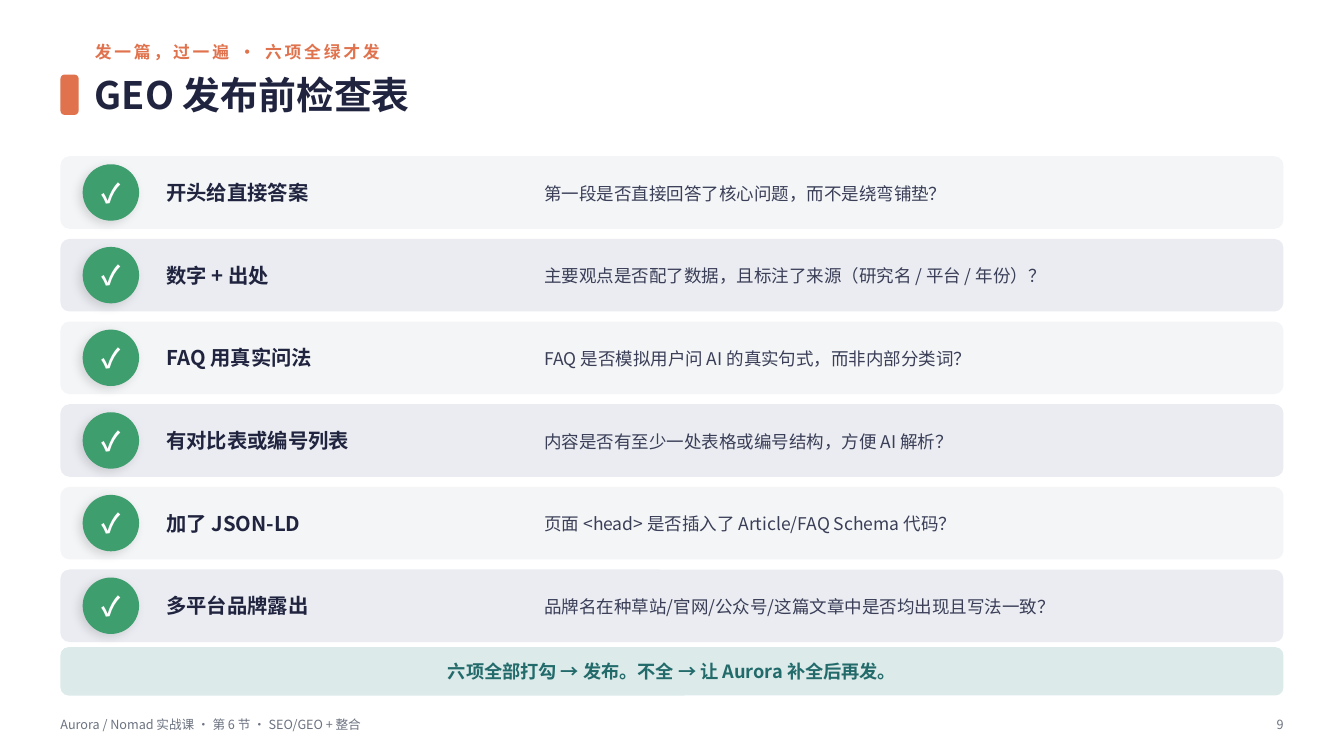
from lxml.etree import SubElement
from pptx import Presentation
from pptx.dml.color import RGBColor
from pptx.enum.shapes import MSO_SHAPE
from pptx.enum.text import MSO_ANCHOR, PP_ALIGN
from pptx.oxml.ns import qn
from pptx.util import Inches, Pt

FONT = "Noto Sans CJK SC"
COLORS = {
    "accent": "E0734D", "ink": "20243F", "body": "3A3E57", "muted": "6B7280",
    "odd_row": "F4F5F7", "even_row": "EAECF1", "check": "3E9E6E",
    "white": "FFFFFF", "summary": "DCEAEA", "teal": "236B6B",
}
CHECKS = [
    ("开头给直接答案", "第一段是否直接回答了核心问题，而不是绕弯铺垫？"),
    ("数字 + 出处", "主要观点是否配了数据，且标注了来源（研究名 / 平台 / 年份）？"),
    ("FAQ 用真实问法", "FAQ 是否模拟用户问 AI 的真实句式，而非内部分类词？"),
    ("有对比表或编号列表", "内容是否有至少一处表格或编号结构，方便 AI 解析？"),
    ("加了 JSON-LD", "页面 <head> 是否插入了 Article/FAQ Schema 代码？"),
    ("多平台品牌露出", "品牌名在种草站/官网/公众号/这篇文章中是否均出现且写法一致？"),
]

SLIDE_W, SLIDE_H = 13.33, 7.5
MARGIN = 0.6
CONTENT_W = SLIDE_W - 2 * MARGIN
RIGHT = SLIDE_W - MARGIN
HEADING_X = 0.94
HEADING_W = RIGHT - HEADING_X
ROWS_TOP, ROW_H, ROW_GAP = 1.55, 0.72, 0.1
CHECK_X, CHECK_SIZE = 0.82, 0.56
NAME_X, NAME_W = 1.65, 3.6
QUESTION_X, QUESTION_W = 5.4, 7.08
LABEL_H = 0.6
FOOTER_Y, FOOTER_H = 7.04, 0.3

prs = Presentation()
prs.slide_width, prs.slide_height = Inches(SLIDE_W), Inches(SLIDE_H)
slide = prs.slides.add_slide(prs.slide_layouts[6])


def add_block(kind, x, y, w, h, color, radius=None):
    block = slide.shapes.add_shape(kind, Inches(x), Inches(y), Inches(w), Inches(h))
    block.shadow.inherit = False
    block.fill.solid()
    block.fill.fore_color.rgb = RGBColor.from_string(COLORS[color])
    block.line.fill.background()
    if radius is not None:
        block.adjustments[0] = radius / min(w, h)
    return block


def write(box, text, size, color, bold=False, align=PP_ALIGN.LEFT):
    """Fill a shape, or a new text box at (x, y, w, h), with one paragraph."""
    if isinstance(box, tuple):
        box = slide.shapes.add_textbox(*map(Inches, box))
    frame = box.text_frame
    frame.word_wrap = True
    frame.vertical_anchor = MSO_ANCHOR.MIDDLE
    frame.margin_left = frame.margin_right = frame.margin_top = frame.margin_bottom = 0
    paragraph = frame.paragraphs[0]
    paragraph.text = text
    paragraph.alignment = align
    font = paragraph.font
    font.name, font.size, font.bold = FONT, Pt(size), bold
    font.color.rgb = RGBColor.from_string(COLORS[color])
    SubElement(paragraph._p.pPr.find(qn("a:defRPr")), qn("a:ea"), typeface=FONT)
    return paragraph


# Heading
kicker = write((HEADING_X, 0.36, HEADING_W, 0.3), "发一篇，过一遍 · 六项全绿才发", 12, "accent", bold=True)
kicker._p.pPr.find(qn("a:defRPr")).set("spc", "200")
add_block(MSO_SHAPE.ROUNDED_RECTANGLE, MARGIN, 0.74, 0.18, 0.4, "accent", radius=0.04)
write((HEADING_X, 0.64, HEADING_W, 0.6), "GEO 发布前检查表", 27, "ink", bold=True)

# Checklist
for i, (name, question) in enumerate(CHECKS):
    top = ROWS_TOP + i * (ROW_H + ROW_GAP)
    add_block(MSO_SHAPE.ROUNDED_RECTANGLE, MARGIN, top, CONTENT_W, ROW_H,
              "even_row" if i % 2 else "odd_row", radius=0.09)

    check = add_block(MSO_SHAPE.OVAL, CHECK_X, top + (ROW_H - CHECK_SIZE) / 2,
                      CHECK_SIZE, CHECK_SIZE, "check")
    effects = check._element.spPr.find(qn("a:effectLst"))
    shadow = SubElement(effects, qn("a:outerShdw"), blurRad=str(Pt(7)), dist=str(Pt(3)),
                        dir=str(135 * 60000), algn="bl", rotWithShape="0")
    black = SubElement(shadow, qn("a:srgbClr"), val="000000")
    SubElement(black, qn("a:alpha"), val="12000")
    write(check, "✓", 19, "white", bold=True, align=PP_ALIGN.CENTER)

    label_top = top + (ROW_H - LABEL_H) / 2
    write((NAME_X, label_top, NAME_W, LABEL_H), name, 14.5, "ink", bold=True)
    detail = write((QUESTION_X, label_top, QUESTION_W, LABEL_H), question, 12.5, "body")
    detail.line_spacing = 1.05

# Summary
summary = add_block(MSO_SHAPE.ROUNDED_RECTANGLE, MARGIN, 6.42, CONTENT_W, 0.48, "summary", radius=0.08)
write(summary, "六项全部打勾 → 发布。不全 → 让 Aurora 补全后再发。", 13, "teal",
      bold=True, align=PP_ALIGN.CENTER)

# Footer
write((MARGIN, FOOTER_Y, 9, FOOTER_H), "Aurora / Nomad 实战课 · 第 6 节 · SEO/GEO + 整合", 9, "muted")
write((RIGHT - 0.7, FOOTER_Y, 0.7, FOOTER_H), "9", 9, "muted", align=PP_ALIGN.RIGHT)

prs.save("out.pptx")
